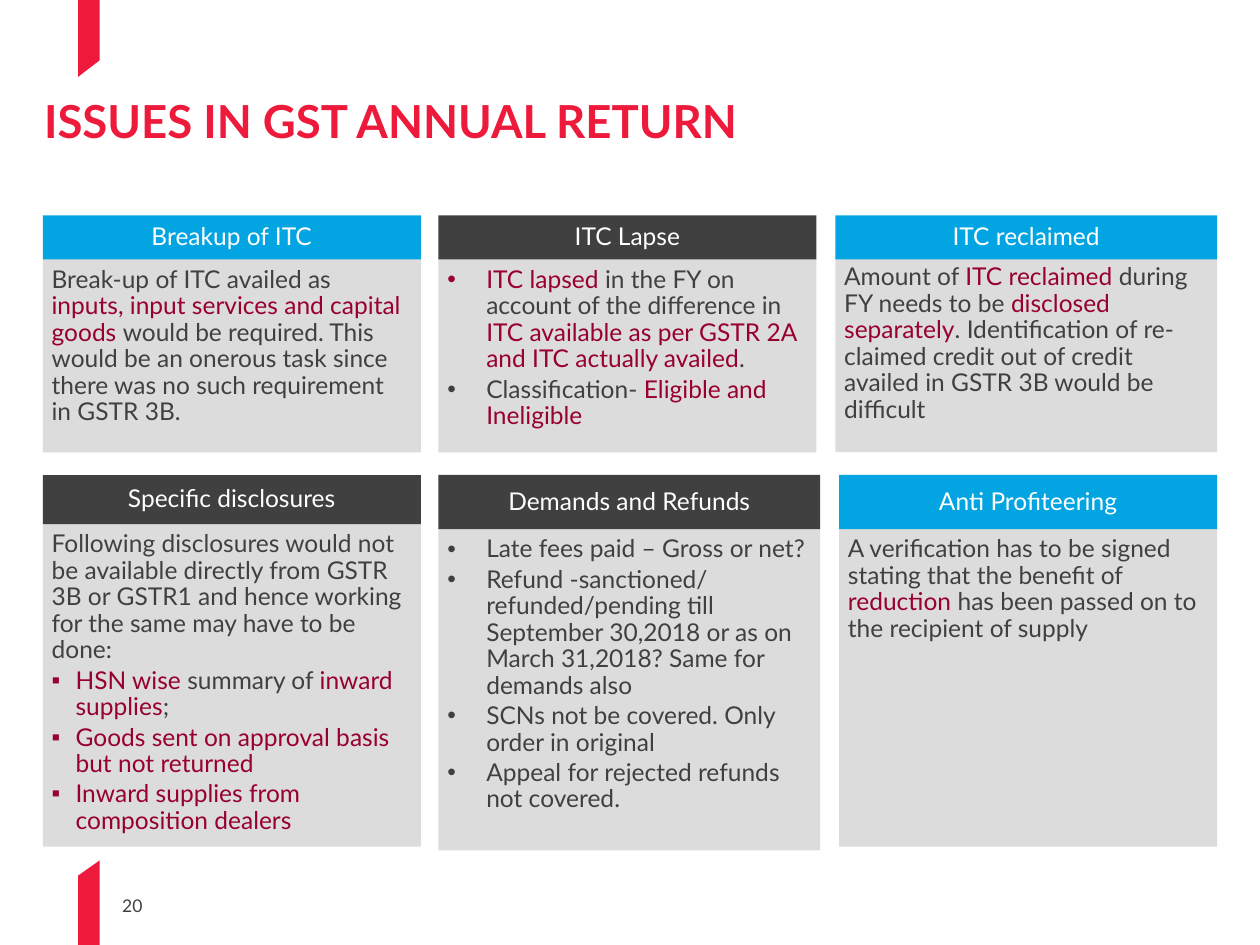
from lxml import etree
from pptx import Presentation
from pptx.dml.color import RGBColor
from pptx.enum.shapes import MSO_SHAPE
from pptx.enum.text import MSO_ANCHOR, PP_ALIGN
from pptx.oxml.ns import qn
from pptx.util import Inches, Pt

RECTANGLE = MSO_SHAPE.RECTANGLE
TOP, MIDDLE, BOTTOM = MSO_ANCHOR.TOP, MSO_ANCHOR.MIDDLE, MSO_ANCHOR.BOTTOM
LEFT, CENTER = PP_ALIGN.LEFT, PP_ALIGN.CENTER

COLORS = {"red": "ED1A3B", "blue": "02A5E2", "dark": "404040",
          "panel": "D9D9D9", "accent": "98002E", "white": "FFFFFF"}
FONT = "Lato"
COLUMNS = (0.34, 3.48, 6.63)
ROWS = (1.71, 3.77)
MARGINS = ("margin_left", "margin_top", "margin_right", "margin_bottom")
INDENTS = {"•": 0.31, "▪": 0.19}
RIBBON_X = (0.62, 0.79)

CARDS = [
    {"title": "Breakup of ITC", "column": 0, "row": 0, "header": "blue", "header_height": 0.35,
     "bottom": 3.59,
     "body": ["Break-up of ITC availed as |inputs, input services and capital goods |would be "
              "required. This would be an onerous task since there was no such requirement "
              "in GSTR 3B."]},
    {"title": "ITC Lapse", "column": 1, "row": 0, "header": "dark", "header_height": 0.35,
     "bottom": 3.59,
     "body": ["•|ITC lapsed |in the FY on account of the difference in |ITC available as per "
              "GSTR 2A and ITC actually availed|.",
              "•Classification- |Eligible and Ineligible"]},
    {"title": "ITC reclaimed", "column": 2, "row": 0, "header": "blue", "header_height": 0.35,
     "bottom": 3.59, "width": 3.03, "overlap": 0.03,
     "body": ["Amount of |ITC reclaimed |during FY needs to be |disclosed separately|. "
              "Identification of re-claimed credit out of credit availed in GSTR 3B would be "
              "difficult"]},
    {"title": "Specific disclosures", "column": 0, "row": 1, "header": "dark",
     "header_height": 0.39, "bottom": 6.72,
     "body": ["Following disclosures would not be available directly from GSTR 3B or GSTR1 and "
              "hence working for the same may have to be done:",
              "▪|HSN wise |summary of |inward supplies|;",
              "▪|Goods sent on approval basis but not returned",
              "▪|Inward supplies from composition dealers"]},
    {"title": "Demands and Refunds", "column": 1, "row": 1, "header": "dark",
     "header_height": 0.43, "bottom": 6.75, "width": 3.03,
     "body": ["•Late fees paid – Gross or net?",
              "•Refund -sanctioned/ refunded/pending till September 30,2018 or as on "
              "March 31,2018? Same for demands also",
              "•SCNs not be covered. Only order in original",
              "•Appeal for rejected refunds not covered."]},
    {"title": "Anti Profiteering", "column": 2, "row": 1, "header": "blue",
     "header_height": 0.43, "bottom": 6.72, "shift": 0.03,
     "body": ["A verification has to be signed stating that the benefit of |reduction| has been "
              "passed on to the recipient of supply"]},
]


def rgb(name):
    """Return the named colour."""
    return RGBColor.from_string(COLORS[name])


def set_values(target, values):
    """Set every attribute in a dict of format values."""
    for attribute, value in values.items():
        setattr(target, attribute, value)


def set_frame(frame, anchor, margins):
    """Set wrapping, anchor and margins in inches."""
    set_values(frame, {"word_wrap": True, "vertical_anchor": anchor})
    set_values(frame, dict(zip(MARGINS, map(Inches, margins))))


def add_run(paragraph, text, color, size=14, bold=False):
    """Append a formatted run."""
    run = paragraph.add_run()
    run.text = text
    set_values(run.font, {"name": FONT, "size": Pt(size), "bold": bold})
    run.font.color.rgb = rgb(color)


def add_bullet(paragraph, mark):
    """Give a paragraph a hanging bullet."""
    properties = paragraph._p.get_or_add_pPr()
    indent = Inches(INDENTS[mark])
    properties.set("marL", str(indent))
    properties.set("indent", str(-indent))
    etree.SubElement(properties, qn("a:buFont")).set("typeface", "Arial")
    etree.SubElement(properties, qn("a:buChar")).set("char", mark)


def write_paragraph(paragraph, text):
    """Write body text in which bars switch the accent colour on and off."""
    if text[0] in INDENTS:
        add_bullet(paragraph, text[0])
        text = text[1:]
    set_values(paragraph, {"alignment": LEFT, "line_spacing": 0.9, "space_after": Pt(2.2)})
    for index, part in enumerate(text.split("|")):
        if part:
            add_run(paragraph, part, "accent" if index % 2 else "dark")


def paint(shape, color):
    """Fill a shape without outline or shadow."""
    shape.shadow.inherit = False
    shape.fill.solid()
    shape.fill.fore_color.rgb = rgb(color)
    shape.line.fill.background()


def add_panel(slide, color, left, top, width, height):
    """Add a plain filled rectangle."""
    panel = slide.shapes.add_shape(RECTANGLE, *map(Inches, (left, top, width, height)))
    paint(panel, color)
    return panel


def add_card(slide, card):
    """Add a translucent text panel under a coloured header."""
    left = COLUMNS[card["column"]] + card.get("shift", 0)
    top = ROWS[card["row"]]
    width = card.get("width", 3)
    body_top = top + card["header_height"] - card.get("overlap", 0.01)

    body = add_panel(slide, "panel", left, body_top, width, card["bottom"] - body_top)
    fill_color = body.fill._xPr.find(qn("a:solidFill"))[0]
    etree.SubElement(fill_color, qn("a:alpha")).set("val", "90000")
    set_frame(body.text_frame, TOP, (0.07, 0.07, 0.09, 0.1))
    for index, text in enumerate(card["body"]):
        frame = body.text_frame
        write_paragraph(frame.add_paragraph() if index else frame.paragraphs[0], text)

    header = add_panel(slide, card["header"], left, top, width, card["header_height"])
    set_frame(header.text_frame, MIDDLE, (0.09, 0.05, 0.09, 0.05))
    heading = header.text_frame.paragraphs[0]
    set_values(heading, {"alignment": CENTER, "line_spacing": 0.9})
    add_run(heading, card["title"], "white")


def add_ribbon(slide, edge, left_tip, right_tip):
    """Add a slanted ribbon hanging from a slide edge."""
    left, right = RIBBON_X
    corners = [(left, edge), (right, edge), (right, right_tip), (left, left_tip)]
    points = [(Inches(x), Inches(y)) for x, y in corners]
    builder = slide.shapes.build_freeform(*points[0], scale=1.0)
    builder.add_line_segments(points[1:], close=True)
    paint(builder.convert_to_shape(), "red")


def add_title(slide, text):
    """Place and format the slide title."""
    title = slide.shapes.title
    set_values(title, dict(zip(("left", "top", "width", "height"),
                               map(Inches, (0.35, 0.82, 9.26, 0.35)))))
    set_frame(title.text_frame, TOP, (0, 0, 0, 0))
    paragraph = title.text_frame.paragraphs[0]
    set_values(paragraph, {"alignment": LEFT, "line_spacing": 0.8})
    add_run(paragraph, text, "red", 26, True)


def add_page_number(slide, number):
    """Add the page number beside the lower ribbon."""
    box = slide.shapes.add_textbox(*map(Inches, (0.97, 7.1, 0.45, 0.17)))
    set_frame(box.text_frame, BOTTOM, (0, 0, 0, 0))
    add_run(box.text_frame.paragraphs[0], number, "dark", 10)


def main():
    """Build and save the slide."""
    presentation = Presentation()
    set_values(presentation, {"slide_width": Inches(10), "slide_height": Inches(7.5)})
    slide = presentation.slides.add_slide(presentation.slide_layouts[5])
    add_ribbon(slide, 7.5, 6.95, 6.83)
    add_page_number(slide, "20")
    add_ribbon(slide, 0, 0.61, 0.48)
    add_title(slide, "ISSUES IN GST ANNUAL RETURN")
    for card in CARDS:
        add_card(slide, card)
    presentation.save("out.pptx")


if __name__ == "__main__":
    main()
